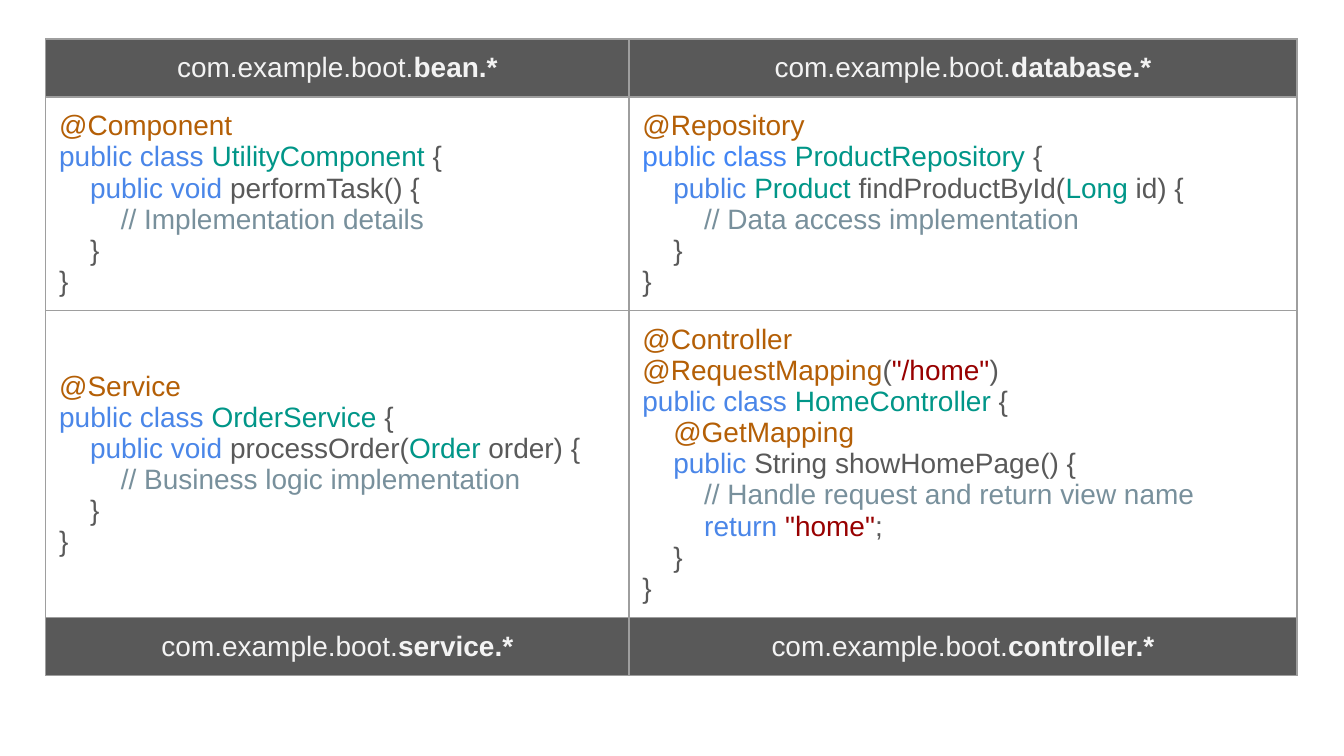
from lxml import etree
from pptx import Presentation
from pptx.dml.color import RGBColor
from pptx.enum.text import MSO_ANCHOR, PP_ALIGN
from pptx.oxml.ns import qn
from pptx.util import Inches, Pt

CENTER, LEFT = PP_ALIGN.CENTER, PP_ALIGN.LEFT
TOP, MIDDLE = MSO_ANCHOR.TOP, MSO_ANCHOR.MIDDLE

THEME = {
    "font": "Arial",
    "size": 15,
    "border_width": 0.75,
    "colors": {
        "border": "9E9E9E",
        "band": "595959",
        "package": "F3F3F3",
        "plain": "595959",
        "annotation": "B45F06",
        "keyword": "4A86E8",
        "bright_keyword": "4285F4",
        "type": "009688",
        "comment": "78909C",
        "string": "980000",
    },
}

SLIDE_WIDTH = 10
SLIDE_HEIGHT = SLIDE_WIDTH * 9 / 16
TABLE_LEFT, TABLE_TOP = 0.34, 0.29
COLUMNS = (4.34, 4.97)
ROWS = (0.35, 1.32, 1.9, 0.35)
CELL_MARGIN = 0.1
INDENT = 0.23

PACKAGE_ROOT = "com.example.boot."
CLOSING = [(1, [("plain", "}")]), (0, [("plain", "}")])]

COMPONENT = [
    (0, [("annotation", "@Component")]),
    (0, [("keyword", "public class "), ("type", "UtilityComponent "), ("plain", "{")]),
    (1, [("keyword", "public void"), ("plain", " performTask() {")]),
    (2, [("comment", "// Implementation details")]),
    *CLOSING,
]
REPOSITORY = [
    (0, [("annotation", "@Repository")]),
    (0, [("bright_keyword", "public class "), ("type", "ProductRepository "), ("plain", "{")]),
    (1, [("keyword", "public "), ("type", "Product "), ("plain", "findProductById("),
         ("type", "Long"), ("plain", " id) {")]),
    (2, [("comment", "// Data access implementation")]),
    *CLOSING,
]
SERVICE = [
    (0, [("annotation", "@Service")]),
    (0, [("keyword", "public class "), ("type", "OrderService "), ("plain", "{")]),
    (1, [("keyword", "public void"), ("plain", " processOrder("), ("type", "Order"),
         ("plain", " order) {")]),
    (2, [("comment", "// Business logic implementation")]),
    *CLOSING,
]
CONTROLLER = [
    (0, [("annotation", "@Controller")]),
    (0, [("annotation", "@RequestMapping"), ("plain", "("), ("string", '"/home"'), ("plain", ")")]),
    (0, [("keyword", "public class "), ("type", "HomeController "), ("plain", "{")]),
    (1, [("annotation", "@GetMapping")]),
    (1, [("keyword", "public "), ("plain", "String showHomePage() {")]),
    (2, [("comment", "// Handle request and return view name")]),
    (2, [("keyword", "return "), ("string", '"home"'), ("plain", ";")]),
    *CLOSING,
]
GRID = [
    ("bean.*", "database.*"),
    (COMPONENT, REPOSITORY),
    (SERVICE, CONTROLLER),
    ("service.*", "controller.*"),
]


def color(name):
    return RGBColor.from_string(THEME["colors"][name])


def add_run(paragraph, text, color_name, bold=False):
    run = paragraph.add_run()
    run.text = text
    run.font.name = THEME["font"]
    run.font.size = Pt(THEME["size"])
    run.font.bold = bold
    run.font.color.rgb = color(color_name)


def add_borders(cell):
    properties = cell._tc.get_or_add_tcPr()
    for side in ("lnL", "lnR", "lnT", "lnB"):
        line = etree.SubElement(properties, qn(f"a:{side}"), w=str(Pt(THEME["border_width"])))
        fill = etree.SubElement(line, qn("a:solidFill"))
        etree.SubElement(fill, qn("a:srgbClr"), val=THEME["colors"]["border"])


def format_cell(cell, anchor):
    cell.margin_left = cell.margin_right = Inches(CELL_MARGIN)
    cell.margin_top = cell.margin_bottom = Inches(CELL_MARGIN)
    cell.vertical_anchor = anchor
    add_borders(cell)


def fill_package_cell(cell, package_name):
    format_cell(cell, TOP)
    cell.fill.solid()
    cell.fill.fore_color.rgb = color("band")
    paragraph = cell.text_frame.paragraphs[0]
    paragraph.alignment = CENTER
    add_run(paragraph, PACKAGE_ROOT, "package")
    add_run(paragraph, package_name, "package", bold=True)


def fill_code_cell(cell, lines):
    format_cell(cell, MIDDLE)
    cell.fill.background()
    frame = cell.text_frame
    for index, (level, runs) in enumerate(lines):
        paragraph = frame.add_paragraph() if index else frame.paragraphs[0]
        paragraph.alignment = LEFT
        properties = paragraph._p.get_or_add_pPr()
        properties.set("marL", str(Inches(INDENT * level)))
        properties.set("indent", "0")
        for color_name, text in runs:
            add_run(paragraph, text, color_name)


def main():
    presentation = Presentation()
    presentation.slide_width = Inches(SLIDE_WIDTH)
    presentation.slide_height = Inches(SLIDE_HEIGHT)
    slide = presentation.slides.add_slide(presentation.slide_layouts[6])
    table = slide.shapes.add_table(
        len(ROWS), len(COLUMNS), Inches(TABLE_LEFT), Inches(TABLE_TOP),
        Inches(sum(COLUMNS)), Inches(sum(ROWS)),
    ).table
    table.first_row = table.horz_banding = False
    for column, width in zip(table.columns, COLUMNS):
        column.width = Inches(width)
    for row, height, contents in zip(table.rows, ROWS, GRID):
        row.height = Inches(height)
        for cell, content in zip(row.cells, contents):
            if isinstance(content, str):
                fill_package_cell(cell, content)
            else:
                fill_code_cell(cell, content)
    presentation.save("out.pptx")


if __name__ == "__main__":
    main()
